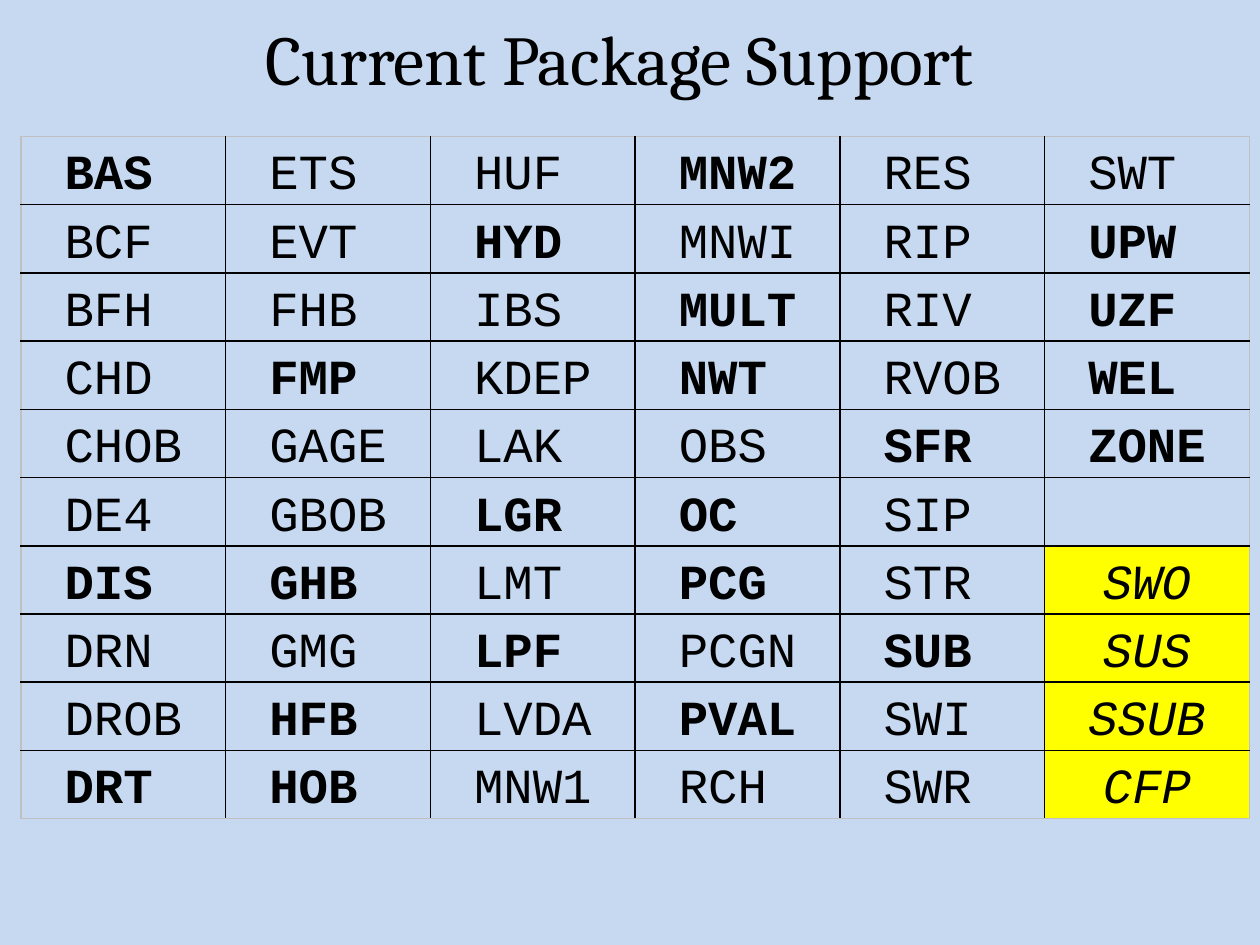
from lxml.etree import SubElement
from pptx import Presentation
from pptx.dml.color import RGBColor
from pptx.enum.text import MSO_ANCHOR as Anchor, PP_ALIGN as Align
from pptx.oxml.ns import qn
from pptx.util import Pt

BACKGROUND = RGBColor(0xC6, 0xD9, 0xF1)
BLACK = RGBColor(0, 0, 0)
GREY = RGBColor(0xC0, 0xC0, 0xC0)
YELLOW = RGBColor(0xFF, 0xFF, 0)

COLUMN_WIDTH, ROW_HEIGHT = 117, 39
CODE_INDENT = 25  # centres a four-letter code in its column

PACKAGES = [row.split() for row in (
    "BAS ETS HUF MNW2 RES SWT",
    "BCF EVT HYD MNWI RIP UPW",
    "BFH FHB IBS MULT RIV UZF",
    "CHD FMP KDEP NWT RVOB WEL",
    "CHOB GAGE LAK OBS SFR ZONE",
    "DE4 GBOB LGR OC SIP",
    "DIS GHB LMT PCG STR SWO",
    "DRN GMG LPF PCGN SUB SUS",
    "DROB HFB LVDA PVAL SWI SSUB",
    "DRT HOB MNW1 RCH SWR CFP",
)]
BOLD = set("BAS MNW2 HYD UPW MULT UZF FMP NWT WEL SFR ZONE LGR OC DIS GHB PCG "
           "LPF SUB HFB PVAL DRT HOB".split())
HIGHLIGHTED = {"SWO", "SUS", "SSUB", "CFP"}


def add_run(para, text, font_name, size, bold=False, italic=False):
    span = para.add_run()
    span.text = text
    font = span.font
    font.name, font.size = font_name, Pt(size)
    font.bold, font.italic = bold, italic
    font.color.rgb = BLACK


def add_title(page, text):
    box = page.shapes.title
    box.left, box.top, box.width, box.height = Pt(30), Pt(-12), Pt(648), Pt(90)
    box.text_frame.vertical_anchor = Anchor.MIDDLE
    para = box.text_frame.paragraphs[0]
    para.alignment = Align.CENTER
    add_run(para, text, "Cambria", 40)


def set_borders(cell, edges):
    """Draw a 1 pt line on each side; edges tells which sides lie on the table's rim."""
    properties = cell._tc.get_or_add_tcPr()
    for side, on_rim in edges.items():
        line = SubElement(properties, qn(f"a:ln{side}"), w=str(Pt(1)))
        fill = SubElement(line, qn("a:solidFill"))
        SubElement(fill, qn("a:srgbClr"), val=str(GREY if on_rim else BLACK))


def fill_cell(cell, code):
    highlighted = code in HIGHLIGHTED
    if highlighted:
        cell.fill.solid()
        cell.fill.fore_color.rgb = YELLOW
    else:
        cell.fill.background()
    cell.vertical_anchor = Anchor.BOTTOM
    cell.margin_left = Pt(1 if highlighted else CODE_INDENT)
    cell.margin_right = cell.margin_top = Pt(1)
    cell.margin_bottom = Pt(0)
    if code:
        para = cell.text_frame.paragraphs[0]
        para.alignment = Align.CENTER if highlighted else Align.LEFT
        add_run(para, code, "Courier New", 28, code in BOLD, highlighted)


def add_package_table(page):
    row_count, column_count = len(PACKAGES), len(PACKAGES[0])
    table = page.shapes.add_table(
        row_count, column_count, Pt(12), Pt(78),
        Pt(column_count * COLUMN_WIDTH), Pt(row_count * ROW_HEIGHT)).table
    table.first_row = table.horz_banding = False
    for r, codes in enumerate(PACKAGES):
        for c in range(column_count):
            cell = table.cell(r, c)
            set_borders(cell, {"L": c == 0, "R": c == column_count - 1,
                               "T": r == 0, "B": r == row_count - 1})
            fill_cell(cell, codes[c] if c < len(codes) else "")


def main():
    deck = Presentation()
    deck.slide_width, deck.slide_height = Pt(720), Pt(540)
    page = deck.slides.add_slide(deck.slide_layouts[5])
    page.background.fill.solid()
    page.background.fill.fore_color.rgb = BACKGROUND
    add_title(page, "Current Package Support")
    add_package_table(page)
    deck.save("out.pptx")


if __name__ == "__main__":
    main()
